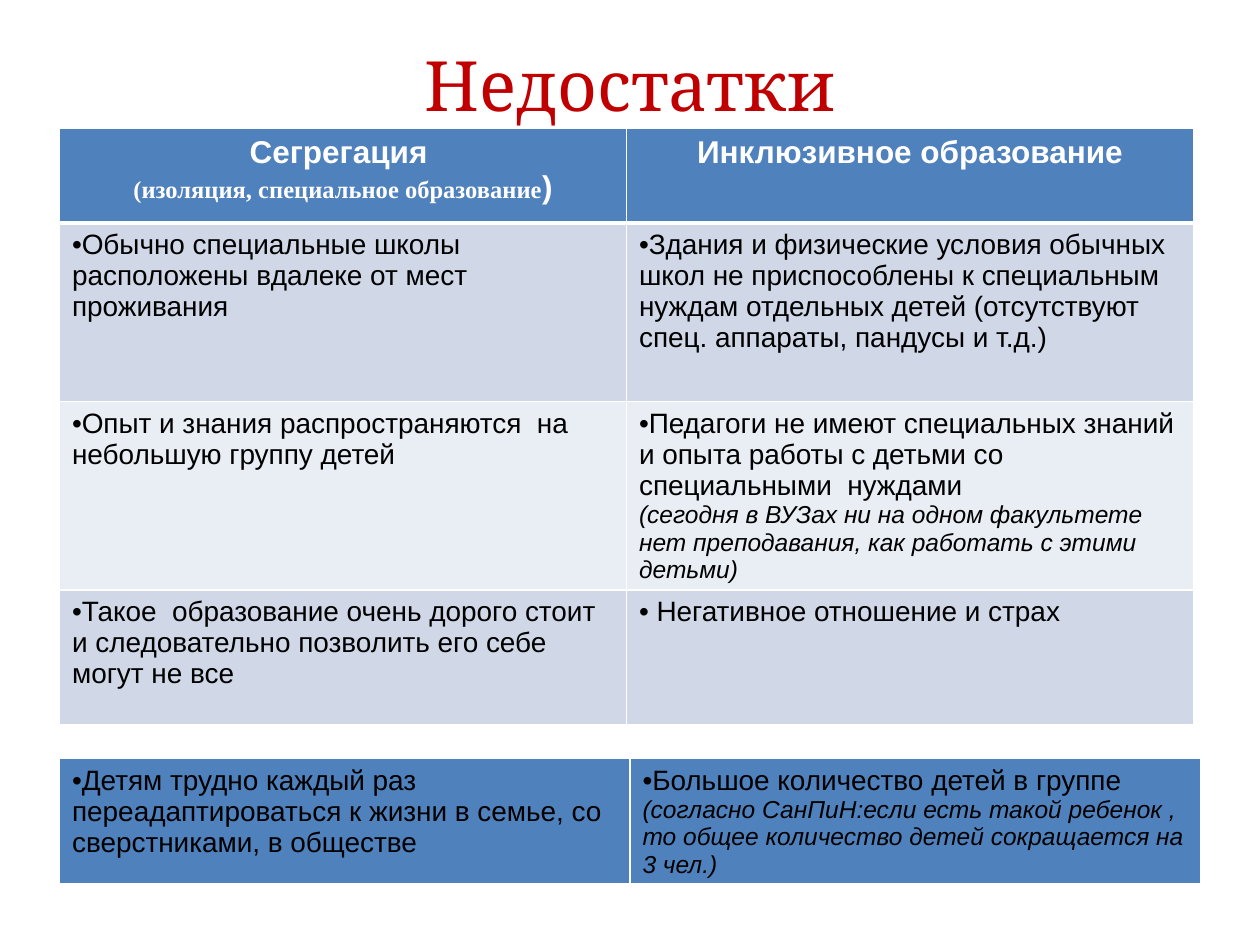
from lxml import etree
from pptx import Presentation
from pptx.dml.color import RGBColor
from pptx.enum.text import MSO_ANCHOR, MSO_AUTO_SIZE, PP_ALIGN
from pptx.oxml.ns import qn
from pptx.util import Pt

CENTER, LEFT = PP_ALIGN.CENTER, PP_ALIGN.LEFT
MIDDLE, NO_FIT = MSO_ANCHOR.MIDDLE, MSO_AUTO_SIZE.NONE
RED = RGBColor(0xC0, 0x00, 0x00)
WHITE = RGBColor(0xFF, 0xFF, 0xFF)
BLACK = RGBColor(0x00, 0x00, 0x00)
BLUE = RGBColor(0x4F, 0x81, 0xBD)
BAND_DARK = RGBColor(0xD0, 0xD8, 0xE8)
BAND_LIGHT = RGBColor(0xE9, 0xED, 0xF4)

# Text styles: font, size, bold, italic, colour
STYLES = {
    "head": ("Arial", 18, True, False, WHITE),
    "subhead": ("Times New Roman", 14, True, False, WHITE),
    "body": ("Arial", 16, False, False, BLACK),
    "note": ("Arial", 14, False, True, BLACK),
}

# Content: a cell is a list of paragraphs, a paragraph a list of (style, text)
TITLE = "Недостатки"
HEADER = [
    [[("head", "Сегрегация ")],
     [("subhead", "(изоляция, специальное образование"), ("head", ")")]],
    [[("head", "Инклюзивное образование")]],
]
DRAWBACKS = [
    [[[("body", "Обычно специальные школы расположены вдалеке от мест проживания")]],
     [[("body", "Здания и физические условия обычных школ не приспособлены к специальным "
                "нуждам отдельных детей (отсутствуют спец. аппараты, пандусы и т.д.)")]]],
    [[[("body", "Опыт и знания распространяются  на небольшую группу детей")]],
     [[("body", "Педагоги не имеют специальных знаний и опыта работы с детьми "
                "со специальными  нуждами")],
      [("note", "(сегодня в ВУЗах ни на одном факультете  нет преподавания, "
                "как работать с этими детьми)")]]],
    [[[("body", "Такое  образование очень дорого стоит и следовательно "
                "позволить его себе могут не все")]],
     [[("body", " Негативное отношение и страх")]]],
]
ADDITION = [
    [[("body", "Детям трудно каждый раз переадаптироваться к жизни в семье, "
               "со сверстниками, в обществе")]],
    [[("body", "Большое количество детей в группе "),
      ("note", "(согласно СанПиН:если есть такой ребенок , то общее количество "
               "детей сокращается на 3 чел.)")]],
]

# Each table: left, top, column width, bottom line of first row, rows, heights, fills
TABLES = [
    (34, 73.5, 324, 3, [HEADER] + DRAWBACKS, [54, 102, 93.6, 77],
     [BLUE, BAND_DARK, BAND_LIGHT, BAND_DARK]),
    (34, 433.5, 326, 3, [ADDITION], [29.5], [BLUE]),
]


def add_bullet(para):
    props = para._p.get_or_add_pPr()
    props.set("marL", "0")
    props.set("indent", "0")
    etree.SubElement(props, qn("a:buFont")).set("typeface", "Arial")
    etree.SubElement(props, qn("a:buChar")).set("char", "•")


def add_span(para, style, text):
    span = para.add_run()
    span.text = text
    font = span.font
    font.name, size, font.bold, font.italic, font.color.rgb = STYLES[style]
    font.size = Pt(size)


def set_borders(cell, widths):
    props = cell._tc.get_or_add_tcPr()
    for place, (side, width) in enumerate(widths.items()):
        line = etree.Element(qn(f"a:ln{side}"), w=str(int(Pt(width))))
        fill = etree.SubElement(line, qn("a:solidFill"))
        etree.SubElement(fill, qn("a:srgbClr")).set("val", str(WHITE))
        props.insert(place, line)


def fill_cell(cell, paragraphs, color):
    cell.fill.solid()
    cell.fill.fore_color.rgb = color
    frame = cell.text_frame
    for index, spans in enumerate(paragraphs):
        para = frame.add_paragraph() if index else frame.paragraphs[0]
        first_style = spans[0][0]
        if first_style == "body":
            add_bullet(para)
        para.alignment = LEFT if first_style in ("body", "note") else CENTER
        for style, text in spans:
            add_span(para, style, text)


def add_grid(page, left, top, column_width, first_line, rows, heights, fills):
    columns = len(rows[0])
    grid = page.shapes.add_table(len(rows), columns, Pt(left), Pt(top),
                                 Pt(column_width * columns), Pt(sum(heights))).table
    for column in grid.columns:
        column.width = Pt(column_width)
    for r, (row, height, color) in enumerate(zip(rows, heights, fills)):
        grid.rows[r].height = Pt(height)
        for c, paragraphs in enumerate(row):
            cell = grid.cell(r, c)
            fill_cell(cell, paragraphs, color)
            set_borders(cell, {"L": 1, "R": 1,
                               "T": first_line if r == 1 else 1,
                               "B": first_line if r == 0 else 1})


def main():
    deck = Presentation()
    deck.slide_width, deck.slide_height = Pt(720), Pt(540)
    page = deck.slides.add_slide(deck.slide_layouts[5])

    # Title
    box = page.shapes.title
    box.left, box.top, box.width, box.height = Pt(36), Pt(21.6), Pt(648), Pt(52)
    frame = box.text_frame
    frame.auto_size = NO_FIT
    frame.vertical_anchor = MIDDLE
    para = frame.paragraphs[0]
    para.alignment = CENTER
    span = para.add_run()
    span.text = TITLE
    span.font.name, span.font.size = "Cambria", Pt(39.6)
    span.font.color.rgb = RED

    # Comparison tables
    for table in TABLES:
        add_grid(page, *table)

    deck.save("out.pptx")


if __name__ == "__main__":
    main()
